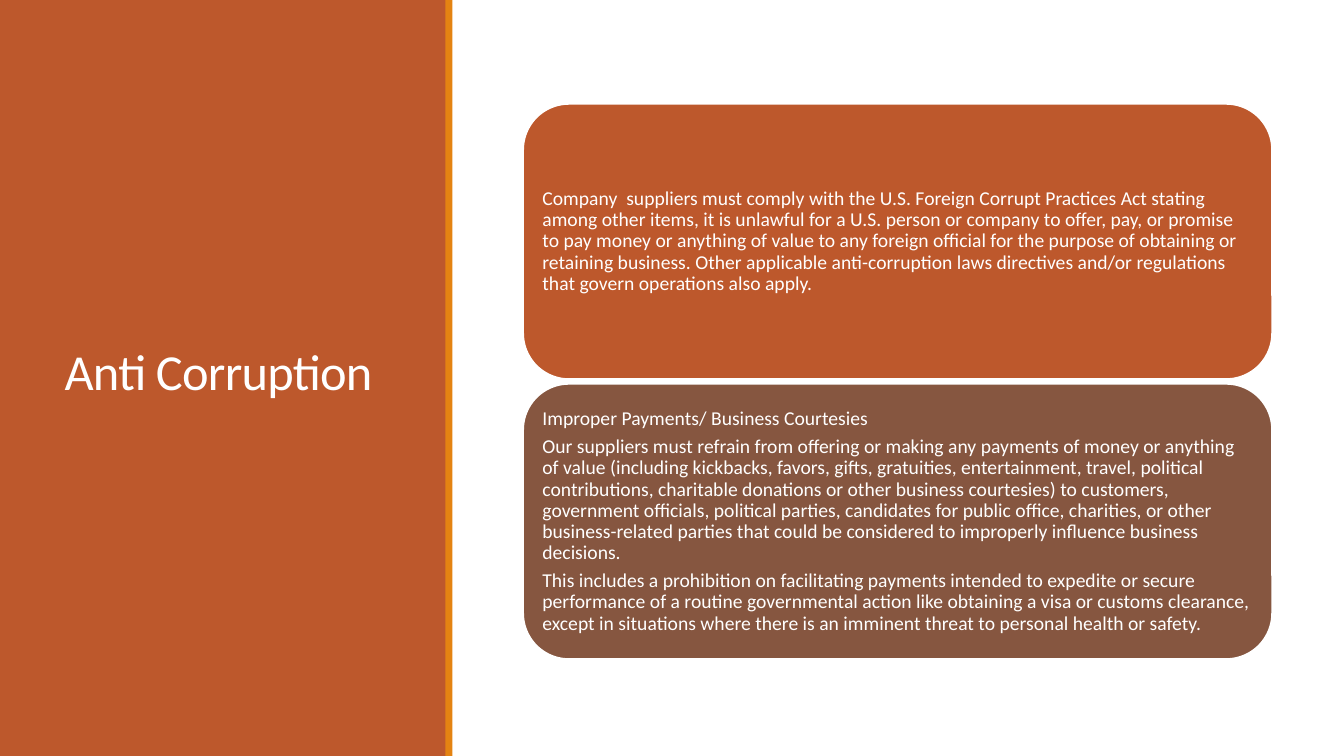
from dataclasses import dataclass

import pptx
import pptx.dml.color
import pptx.enum.shapes
import pptx.enum.text
import pptx.util

Pt = pptx.util.Pt
Color = pptx.dml.color.RGBColor
Kind = pptx.enum.shapes.MSO_SHAPE
Text = pptx.enum.text

RUST = Color(0xBD, 0x58, 0x2C)
AMBER = Color(0xE4, 0x83, 0x12)
BROWN = Color(0x86, 0x56, 0x40)
WHITE = Color(0xFF, 0xFF, 0xFF)

TOP, STEP = 74.2, 200


@dataclass
class Box:
    left: float
    top: float
    width: float
    height: float
    fill: Color
    kind: Kind = Kind.RECTANGLE
    edge: float = 0


@dataclass
class Panel:
    fill: Color
    lines: list[str]


BAND = Box(0, 0, 319, 540, RUST)
STRIPE = Box(318.2, 0, 5, 540, AMBER)
PANELS = [
    Panel(RUST, [
        "Company  suppliers must comply with the U.S. Foreign Corrupt Practices Act "
        "stating among other items, it is unlawful for a U.S. person or company to "
        "offer, pay, or promise to pay money or anything of value to any foreign "
        "official for the purpose of obtaining or retaining business. Other applicable "
        "anti-corruption laws directives and/or regulations that govern operations "
        "also apply.",
    ]),
    Panel(BROWN, [
        "Improper Payments/ Business Courtesies",
        "Our suppliers must refrain from offering or making any payments of money or "
        "anything of value (including kickbacks, favors, gifts, gratuities, "
        "entertainment, travel, political contributions, charitable donations or other "
        "business courtesies) to customers, government officials, political parties, "
        "candidates for public office, charities, or other business-related parties "
        "that could be considered to improperly influence business decisions.",
        "This includes a prohibition on facilitating payments intended to expedite or "
        "secure performance of a routine governmental action like obtaining a visa or "
        "customs clearance, except in situations where there is an imminent threat to "
        "personal health or safety.",
    ]),
]


def draw(slide, box: Box):
    shape = slide.shapes.add_shape(
        box.kind, Pt(box.left), Pt(box.top), Pt(box.width), Pt(box.height))
    shape.shadow.inherit = False
    shape.fill.solid()
    shape.fill.fore_color.rgb = box.fill
    if box.edge:
        shape.line.color.rgb = WHITE
        shape.line.width = Pt(box.edge)
    else:
        shape.line.fill.background()
    return shape


def write(shape, lines: list[str], *, size: float, lead: float, after: float = 0,
          track: int = 0, side: float = 7.2, edge: float = 3.6) -> None:
    frame = shape.text_frame
    frame.word_wrap = True
    frame.auto_size = Text.MSO_AUTO_SIZE.NONE
    frame.vertical_anchor = Text.MSO_ANCHOR.MIDDLE
    frame.margin_left = frame.margin_right = Pt(side)
    frame.margin_top = frame.margin_bottom = Pt(edge)
    frame.text = "\n".join(lines)
    for para in frame.paragraphs:
        para.alignment = Text.PP_ALIGN.LEFT
        para.line_spacing = lead
        para.space_before = Pt(0)
        para.space_after = Pt(after)
        for run in para.runs:
            run.font.name = "Calibri"
            run.font.size = Pt(size)
            run.font.color.rgb = WHITE
            if track:
                run.font._element.set("spc", str(track))


def main() -> None:
    deck = pptx.Presentation()
    deck.slide_width, deck.slide_height = Pt(960), Pt(540)
    slide = deck.slides.add_slide(deck.slide_layouts[5])

    band = draw(slide, BAND)
    title = slide.shapes.title
    title.left, title.top = Pt(38.9), Pt(41)
    title.width, title.height = Pt(242.6), Pt(454.3)
    write(title, ["Anti Corruption"], size=36, lead=0.85, track=-50)
    band._element.addnext(title._element)
    draw(slide, STRIPE)

    for row, panel in enumerate(PANELS):
        box = Box(373.7, TOP + row * STEP, 535, 196.6, panel.fill,
                  Kind.ROUNDED_RECTANGLE, 1.25)
        write(draw(slide, box), panel.lines, size=14, lead=0.9, after=4.9,
              side=4.2, edge=4.2)

    deck.save("out.pptx")


if __name__ == "__main__":
    main()
